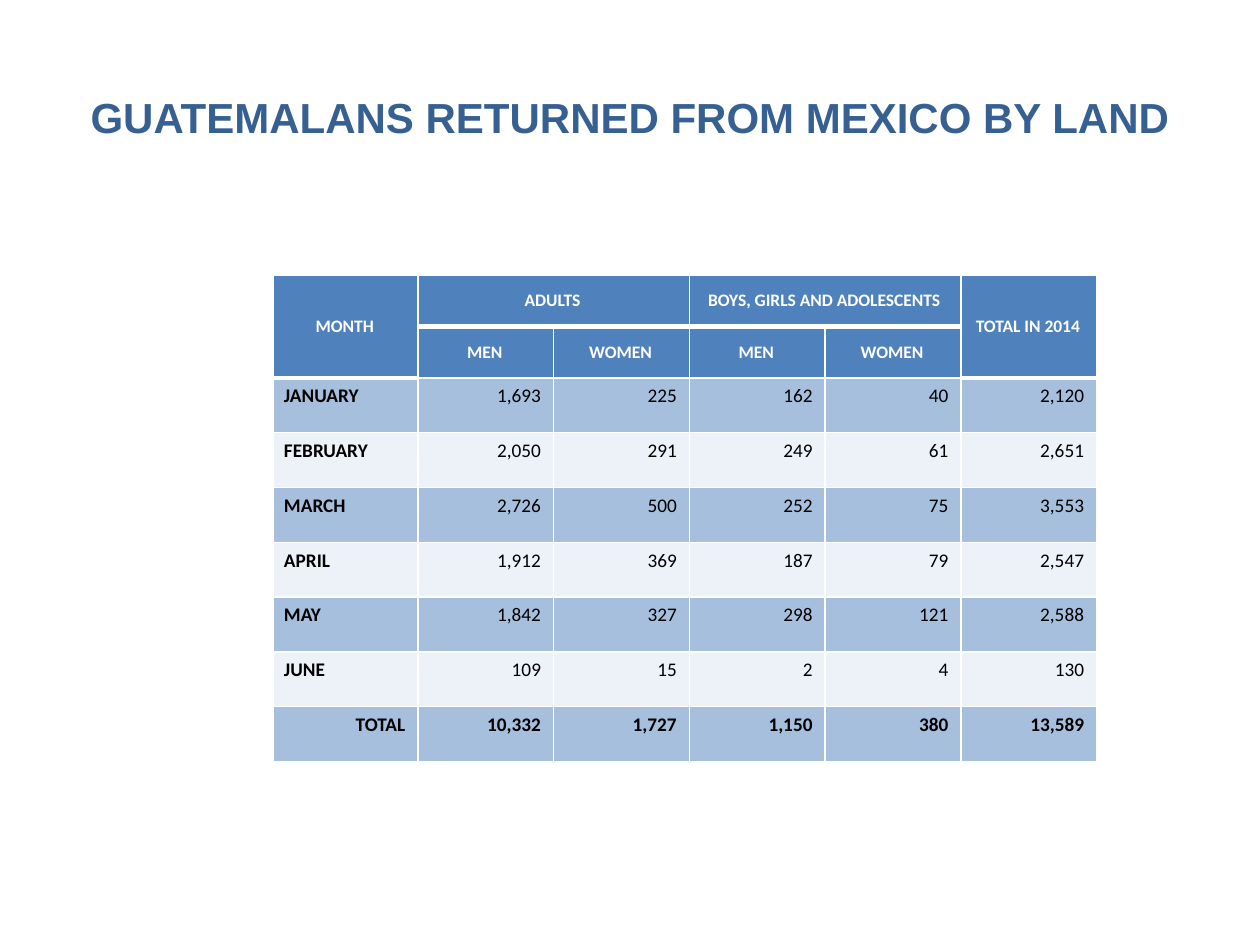
from lxml import etree
from pptx import Presentation
from pptx.dml.color import RGBColor
from pptx.enum.text import MSO_ANCHOR, PP_ALIGN
from pptx.oxml.ns import qn
from pptx.util import Pt

LEFT, CENTER, RIGHT = PP_ALIGN.LEFT, PP_ALIGN.CENTER, PP_ALIGN.RIGHT
TOP, MIDDLE = MSO_ANCHOR.TOP, MSO_ANCHOR.MIDDLE

# Content
TITLE = "GUATEMALANS RETURNED FROM MEXICO BY LAND"
# Header cells: text, row, column, rows spanned, columns spanned
HEADERS = [
    ("MONTH", 0, 0, 2, 1),
    ("ADULTS", 0, 1, 1, 2),
    ("BOYS, GIRLS AND ADOLESCENTS", 0, 3, 1, 2),
    ("TOTAL IN 2014", 0, 5, 2, 1),
    ("MEN", 1, 1, 1, 1),
    ("WOMEN", 1, 2, 1, 1),
    ("MEN", 1, 3, 1, 1),
    ("WOMEN", 1, 4, 1, 1),
]
RETURNS = [
    ("JANUARY", 1693, 225, 162, 40, 2120),
    ("FEBRUARY", 2050, 291, 249, 61, 2651),
    ("MARCH", 2726, 500, 252, 75, 3553),
    ("APRIL", 1912, 369, 187, 79, 2547),
    ("MAY", 1842, 327, 298, 121, 2588),
    ("JUNE", 109, 15, 2, 4, 130),
    ("TOTAL", 10332, 1727, 1150, 380, 13589),
]

THEME = {
    "title_font": "Arial", "table_font": "Calibri",
    "title_size": 24, "header_size": 10, "body_size": 11,
    "title": "376092", "header": "4F81BD", "white": "FFFFFF", "black": "000000",
    "bands": ("4F81BD", "DCE6F2"), "band_opacity": 50,
    "thin": 1, "thick": 3,
}

# Layout in points
PAGE_SIZE = (720, 540)
TITLE_BOX = (36, 21.6, 648, 90)
TABLE_AT = (156.3, 157)
COLUMN_WIDTHS = [82.5] + [77.6] * 5
HEADER_ROWS = 2
ROW_HEIGHTS = [29.5] * HEADER_ROWS + [31.3] * len(RETURNS)


def write(frame, text, font, size, color, bold=False, align=LEFT):
    para = frame.paragraphs[0]
    para.alignment = align
    span = para.add_run()
    span.text = text
    span.font.name = font
    span.font.size = Pt(size)
    span.font.bold = bold
    span.font.color.rgb = RGBColor.from_string(color)


def add_color(parent, color):
    fill = etree.SubElement(parent, qn("a:solidFill"))
    return etree.SubElement(fill, qn("a:srgbClr"), val=color)


def style_cell(cell, color, opacity=100, bottom=THEME["thin"], anchor=TOP):
    cell.vertical_anchor = anchor
    cell.margin_left = Pt(6)
    properties = cell._tc.get_or_add_tcPr()
    # Borders come before the fill
    for side in ("L", "R", "T", "B"):
        width = bottom if side == "B" else THEME["thin"]
        line = etree.SubElement(properties, qn(f"a:ln{side}"), w=str(Pt(width)))
        add_color(line, THEME["white"])
    tint = add_color(properties, color)
    if opacity < 100:
        etree.SubElement(tint, qn("a:alpha"), val=str(opacity * 1000))


def add_title(page):
    box = page.shapes.add_textbox(*map(Pt, TITLE_BOX))
    box.text_frame.word_wrap = True
    box.text_frame.vertical_anchor = MIDDLE
    write(box.text_frame, TITLE, THEME["title_font"], THEME["title_size"],
          THEME["title"], bold=True, align=CENTER)


def add_returns_table(page):
    size = (sum(COLUMN_WIDTHS), sum(ROW_HEIGHTS))
    table = page.shapes.add_table(len(ROW_HEIGHTS), len(COLUMN_WIDTHS),
                                  *map(Pt, TABLE_AT + size)).table
    for column, width in zip(table.columns, COLUMN_WIDTHS):
        column.width = Pt(width)
    for row, height in zip(table.rows, ROW_HEIGHTS):
        row.height = Pt(height)

    # Header cells, some of them merged
    for text, row, column, row_span, column_span in HEADERS:
        cell = table.cell(row, column)
        if row_span * column_span > 1:
            cell.merge(table.cell(row + row_span - 1, column + column_span - 1))
        style_cell(cell, THEME["header"], anchor=MIDDLE,
                   bottom=THEME["thick"] if row == 0 else THEME["thin"])
        write(cell.text_frame, text, THEME["table_font"], THEME["header_size"],
              THEME["white"], bold=True, align=CENTER)

    # Monthly rows and the total
    for index, (month, *counts) in enumerate(RETURNS):
        is_total = month == "TOTAL"
        texts = [month] + [f"{count:,}" for count in counts]
        for column, text in enumerate(texts):
            cell = table.cell(HEADER_ROWS + index, column)
            style_cell(cell, THEME["bands"][index % 2], THEME["band_opacity"])
            write(cell.text_frame, text, THEME["table_font"], THEME["body_size"],
                  THEME["black"], bold=is_total or column == 0,
                  align=RIGHT if is_total or column else LEFT)


def main():
    deck = Presentation()
    deck.slide_width, deck.slide_height = map(Pt, PAGE_SIZE)
    page = deck.slides.add_slide(deck.slide_layouts[6])
    add_title(page)
    add_returns_table(page)
    deck.save("out.pptx")


if __name__ == "__main__":
    main()
